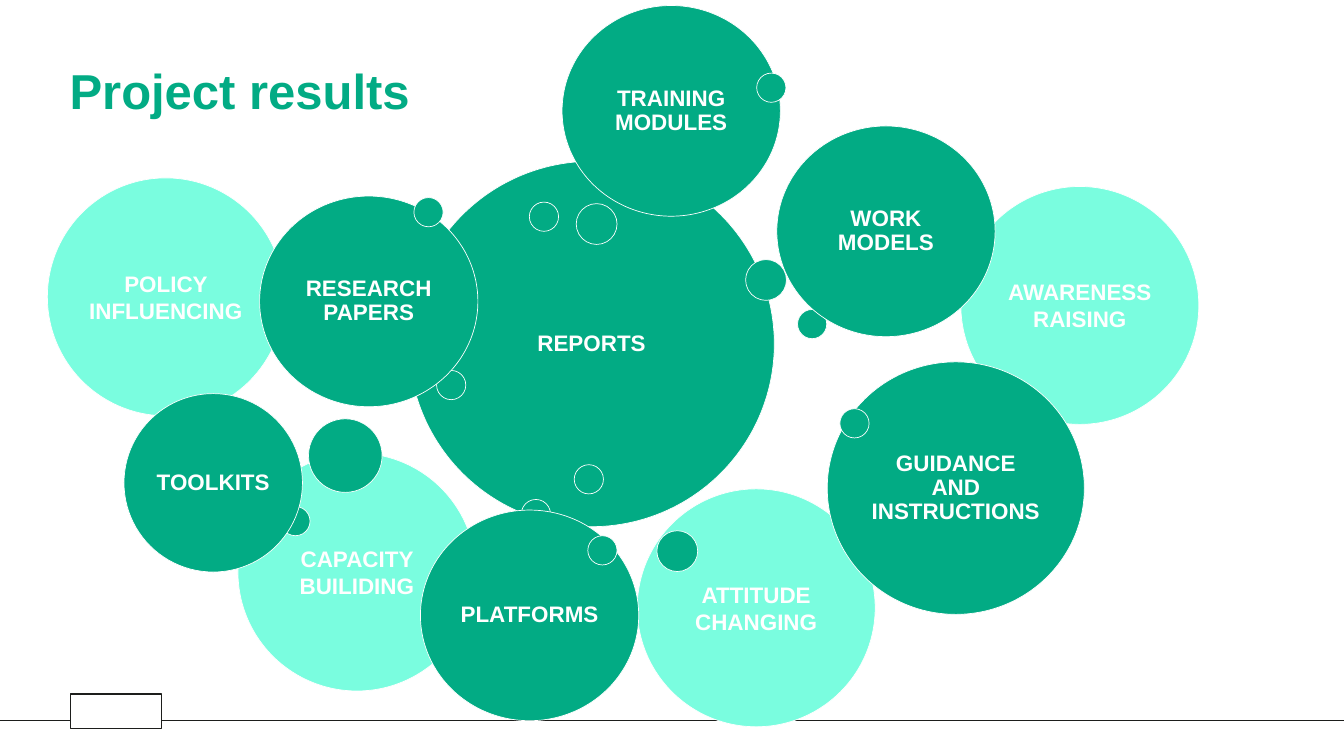
from pptx import Presentation
from pptx.dml.color import RGBColor
from pptx.enum.shapes import MSO_CONNECTOR, MSO_SHAPE
from pptx.enum.text import MSO_ANCHOR, PP_ALIGN
from pptx.oxml.ns import qn
from pptx.util import Inches, Pt
from lxml import etree

OVAL, RECT, STRAIGHT = MSO_SHAPE.OVAL, MSO_SHAPE.RECTANGLE, MSO_CONNECTOR.STRAIGHT
MIDDLE, LEFT, CENTER = MSO_ANCHOR.MIDDLE, PP_ALIGN.LEFT, PP_ALIGN.CENTER

THEME = {
    "green": RGBColor(0x02, 0xAB, 0x84),
    "mint": RGBColor(0x7A, 0xFD, 0xDF),
    "white": RGBColor(0xFF, 0xFF, 0xFF),
    "ink": RGBColor(0x1D, 0x1E, 0x1C),
    "title": {"name": "Arial", "size": Pt(70), "bold": True},
    "label": {"name": "Arial", "size": Pt(32), "bold": True},
}


def write(shape, text, style, color, align, spacing=1.0):
    """Put one formatted paragraph, vertically centred, in a shape."""
    tf = shape.text_frame
    tf.word_wrap = True
    tf.vertical_anchor = MIDDLE
    p = tf.paragraphs[0]
    p.alignment = align
    p.line_spacing = spacing
    r = p.add_run()
    r.text = text
    for name, value in THEME[style].items():
        setattr(r.font, name, value)
    r.font.color.rgb = THEME[color]


prs = Presentation()
prs.slide_width, prs.slide_height = Inches(26.66), Inches(15)
s = prs.slides.add_slide(prs.slide_layouts[5])

# Title
title = s.shapes.title
title.left, title.top, title.width, title.height = map(Inches, (1.38, 1.2, 23.91, 1.18))
tf = title.text_frame
tf.margin_left = tf.margin_right = tf.margin_top = tf.margin_bottom = 0
write(title, "Project results", "title", "green", LEFT)

# Footer: a rule on either side of a plain block
for x1, x2 in [(0, 1.4), (3.2, 26.66)]:
    rule = s.shapes.add_connector(
        STRAIGHT, Inches(x1), Inches(14.29), Inches(x2), Inches(14.29))
    rule.line.color.rgb = THEME["ink"]
    rule.line.width = Pt(1.5)
    etree.SubElement(rule._element.spPr, qn("a:effectLst"))

block = s.shapes.add_shape(RECT, *map(Inches, (1.4, 13.77, 1.8, 0.69)))
block.shadow.inherit = False
block.fill.background()
block.line.color.rgb = THEME["ink"]
block.line.width = Pt(1.5)

# Bubbles from back to front: left, top, width, height, colour, label
DOT, BALL = (0.58, 0.58), (0.81, 0.81)
LARGE, MEDIUM = (4.72, 4.72), (4.33, 4.18)
bubbles = [
    (19.06, 3.7, *LARGE, "mint", "AWARENESS RAISING"),
    (0.94, 3.53, 4.7, 4.72, "mint", "POLICY INFLUENCING"),
    (12.64, 9.7, *LARGE, "mint", "ATTITUDE CHANGING"),
    (4.72, 8.99, *LARGE, "mint", "CAPACITY BUILIDING"),
    (8.11, 3.2, 7.25, 7.25, "green", "REPORTS"),
    (10.34, 9.91, *DOT, "green", ""),
    (15.82, 6.14, *DOT, "green", ""),
    (13.03, 10.53, *BALL, "green", ""),
    (10.5, 4.01, *DOT, "green", ""),
    (8.66, 7.35, *DOT, "green", ""),
    (5.15, 3.89, *MEDIUM, "green", "RESEARCH PAPERS"),
    (11.43, 4.04, *BALL, "green", ""),
    (6.12, 8.31, 1.46, 1.46, "green", ""),
    (15.41, 2.5, *MEDIUM, "green", "WORK MODELS"),
    (14.79, 5.15, *BALL, "green", ""),
    (5.57, 10.05, *DOT, "green", ""),
    (11.39, 9.22, *DOT, "green", ""),
    (16.41, 7.18, 5.1, 5.01, "green", "GUIDANCE AND INSTRUCTIONS"),
    (16.66, 8.11, *DOT, "green", ""),
    (8.34, 10.12, *MEDIUM, "green", "PLATFORMS"),
    (11.66, 10.63, *DOT, "green", ""),
    (11.15, 0.11, *MEDIUM, "green", "TRAINING MODULES"),
    (8.21, 3.92, *DOT, "green", ""),
    (15.01, 1.45, *DOT, "green", ""),
    (2.46, 7.81, 3.54, 3.54, "green", "TOOLKITS"),
]
for left, top, width, height, color, label in bubbles:
    bubble = s.shapes.add_shape(OVAL, *map(Inches, (left, top, width, height)))
    bubble.shadow.inherit = False
    bubble.fill.solid()
    bubble.fill.fore_color.rgb = THEME[color]
    bubble.line.color.rgb = THEME["white"]
    bubble.line.width = Pt(1)
    if label:
        write(bubble, label, "label", "white", CENTER, 0.9 if color == "green" else 1.0)

prs.save("out.pptx")
